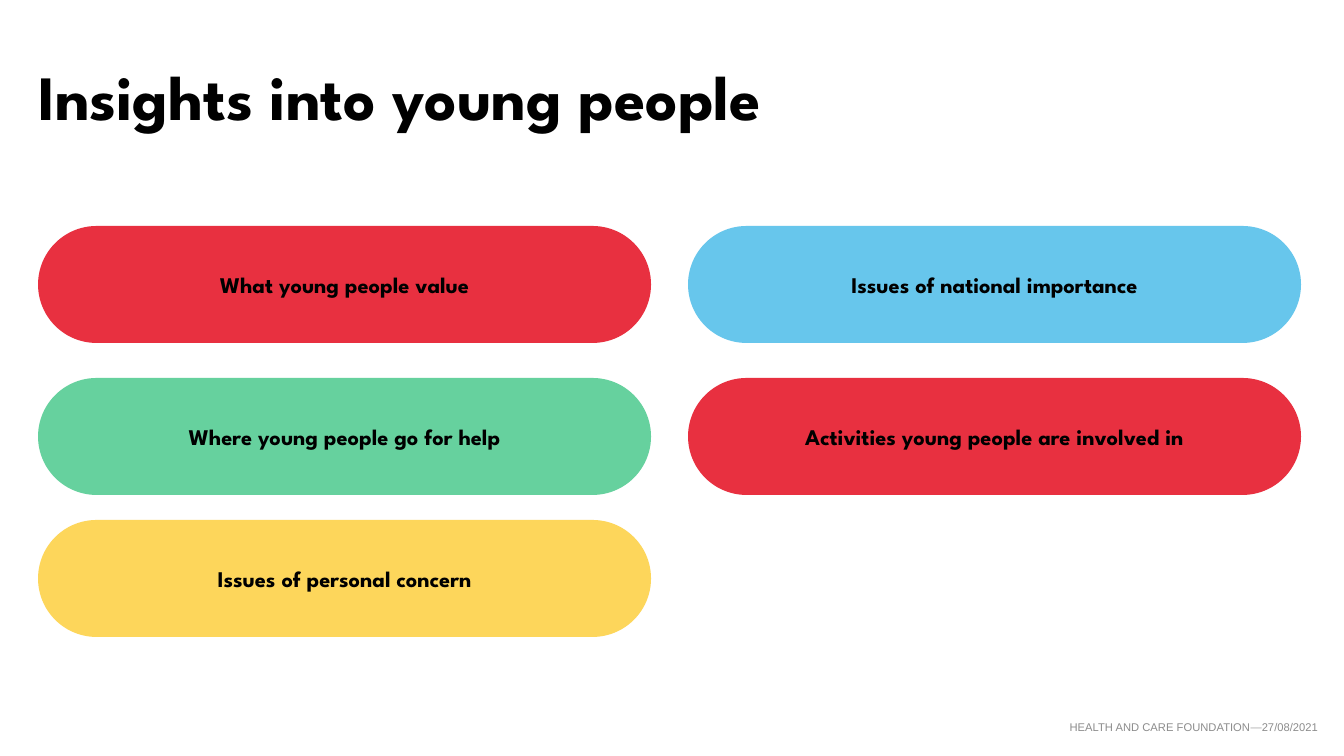
from dataclasses import dataclass

from pptx import Presentation
from pptx.dml.color import RGBColor
from pptx.enum.shapes import MSO_SHAPE
from pptx.enum.text import MSO_ANCHOR as Anchor, PP_ALIGN as Align
from pptx.util import Emu, Pt

PX = 914400 / 100.8


@dataclass(frozen=True)
class Theme:
    """Colours, fonts and type sizes of the slide."""
    black: str = "000000"
    grey: str = "8C8C8C"
    red: str = "E83040"
    green: str = "66D19E"
    yellow: str = "FDD65B"
    blue: str = "67C6EC"
    display: str = "League Spartan"
    footer: str = "Arial"
    dash: str = "Montserrat"
    title_size: int = 45
    label_size: int = 16
    footer_size: int = 8


THEME = Theme()
COLUMN_LEFTS = (38, 688)
ROW_TOPS = (226, 378, 520)
PILL_WIDTH, PILL_HEIGHT = 613, 117
TOPICS = (
    (0, 0, "What young people value", THEME.red),
    (0, 1, "Where young people go for help", THEME.green),
    (0, 2, "Issues of personal concern", THEME.yellow),
    (1, 0, "Issues of national importance", THEME.blue),
    (1, 1, "Activities young people are involved in", THEME.red),
)


def px(*lengths):
    """Turn pixel lengths into EMU."""
    return [Emu(round(length * PX)) for length in lengths]


def style_run(run, font, size, color, bold=False):
    """Set the typeface, size, colour and weight of a run."""
    run.font.name = font
    run.font.size = Pt(size)
    run.font.bold = bold
    run.font.color.rgb = RGBColor.from_string(color)


def add_title(slide, text):
    """Fill and place the title placeholder."""
    title = slide.shapes.title
    title.left, title.top, title.width, title.height = px(28, 61, 842, 133)
    frame = title.text_frame
    frame.text = text
    frame.word_wrap = True
    frame.vertical_anchor = Anchor.TOP
    paragraph = frame.paragraphs[0]
    paragraph.alignment = Align.LEFT
    paragraph.line_spacing = 0.9
    paragraph.space_before = Pt(0)
    style_run(paragraph.runs[0], THEME.display, THEME.title_size, THEME.black, True)


def add_pill(slide, column, row, text, color):
    """Draw one rounded topic button in its grid cell."""
    shape = slide.shapes.add_shape(
        MSO_SHAPE.ROUNDED_RECTANGLE,
        *px(COLUMN_LEFTS[column], ROW_TOPS[row], PILL_WIDTH, PILL_HEIGHT))
    shape.adjustments[0] = 0.5
    shape.shadow.inherit = False
    shape.fill.solid()
    shape.fill.fore_color.rgb = RGBColor.from_string(color)
    shape.line.fill.background()
    frame = shape.text_frame
    frame.text = text
    frame.word_wrap = True
    frame.vertical_anchor = Anchor.MIDDLE
    paragraph = frame.paragraphs[0]
    paragraph.alignment = Align.CENTER
    paragraph.space_after = Pt(6)
    style_run(paragraph.runs[0], THEME.display, THEME.label_size, THEME.black, True)


def add_footer(slide, organisation, date):
    """Write the organisation and date at the lower right."""
    frame = slide.shapes.add_textbox(*px(932, 714, 396, 25)).text_frame
    frame.word_wrap = True
    frame.vertical_anchor = Anchor.BOTTOM
    paragraph = frame.paragraphs[0]
    paragraph.alignment = Align.RIGHT
    for text, font in ((organisation, THEME.footer), ("—", THEME.dash), (date, THEME.footer)):
        run = paragraph.add_run()
        run.text = text
        style_run(run, font, THEME.footer_size, THEME.grey)


def main():
    """Build and save the slide."""
    presentation = Presentation()
    presentation.slide_width, presentation.slide_height = px(1344, 756)
    slide = presentation.slides.add_slide(presentation.slide_layouts.get_by_name("Title Only"))
    add_footer(slide, "HEALTH AND CARE FOUNDATION", "27/08/2021")
    add_title(slide, "Insights into young people")
    for topic in TOPICS:
        add_pill(slide, *topic)
    presentation.save("out.pptx")


if __name__ == "__main__":
    main()
